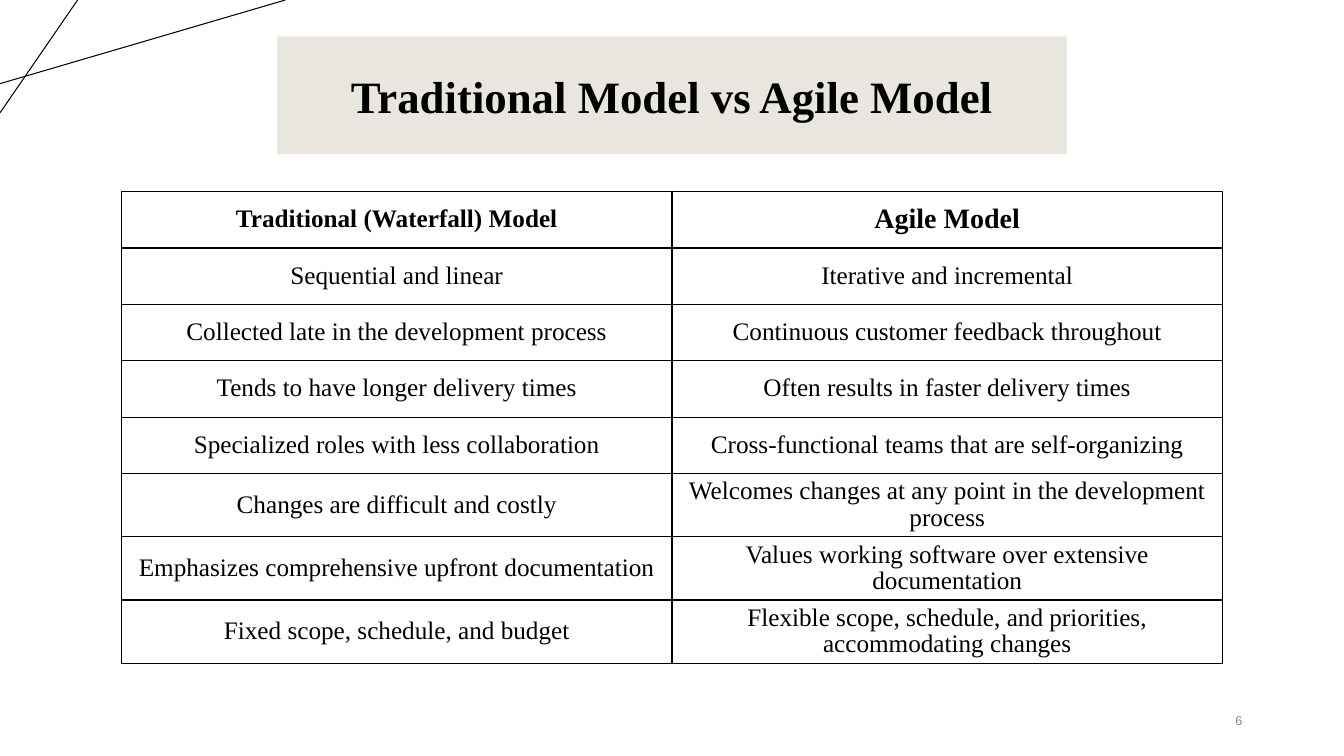
"""Build the slide that compares the traditional and agile models."""
from dataclasses import dataclass

from lxml.etree import SubElement
from pptx import Presentation
from pptx.dml.color import RGBColor
from pptx.enum.shapes import MSO_CONNECTOR
from pptx.enum.text import MSO_ANCHOR, PP_ALIGN
from pptx.oxml.ns import qn
from pptx.util import Inches, Pt

WIDTH, HEIGHT = Inches(13.33), Inches(7.5)
ROWS = [
    ("Traditional (Waterfall) Model", "Agile Model"),
    ("Sequential and linear", "Iterative and incremental"),
    ("Collected late in the development process", "Continuous customer feedback throughout"),
    ("Tends to have longer delivery times", "Often results in faster delivery times"),
    ("Specialized roles with less collaboration", "Cross-functional teams that are self-organizing"),
    ("Changes are difficult and costly", "Welcomes changes at any point in the development process"),
    ("Emphasizes comprehensive upfront documentation", "Values working software over extensive documentation"),
    ("Fixed scope, schedule, and budget", "Flexible scope, schedule, and priorities, accommodating changes"),
]


@dataclass(frozen=True)
class Theme:
    """Colours, fonts and type sizes of the slide."""
    ink: str = "000000"
    band: str = "E9E6DF"
    muted: str = "888888"
    serif: str = "Times New Roman"
    sans: str = "Arial"
    title: int = 32
    agile_head: int = 20
    body: int = 18
    number: int = 9


THEME = Theme()


def write(tf, text, size, align=PP_ALIGN.CENTER, bold=False, font=THEME.serif, color=THEME.ink):
    """Write one formatted paragraph into a text frame and return it."""
    tf.word_wrap = True
    tf.vertical_anchor = MSO_ANCHOR.MIDDLE
    p = tf.paragraphs[0]
    p.text = text
    p.alignment = align
    p.font.name, p.font.size, p.font.bold = font, Pt(size), bold
    p.font.color.rgb = RGBColor.from_string(color)
    return p


def add_line(slide, x1, y1, x2, y2):
    """Draw a thin line between two points given in inches."""
    line = slide.shapes.add_connector(MSO_CONNECTOR.STRAIGHT, *map(Inches, (x1, y1, x2, y2)))
    line.line.color.rgb = RGBColor.from_string(THEME.ink)
    line.line.width = Pt(0.75)
    SubElement(line._element.spPr, qn("a:effectLst"))


def format_title(slide, text):
    """Place the title on its coloured band."""
    sp = slide.shapes.title
    sp.width, sp.height = Inches(7.83), Inches(1.17)
    sp.left, sp.top = (WIDTH - sp.width) // 2, Inches(0.36)
    sp.fill.solid()
    sp.fill.fore_color.rgb = RGBColor.from_string(THEME.band)
    write(sp.text_frame, text, THEME.title, bold=True)


def add_borders(cell):
    """Draw a one-point border on every side of a cell."""
    tc_pr = cell._tc.get_or_add_tcPr()
    for side in ("lnL", "lnR", "lnT", "lnB"):
        ln = SubElement(tc_pr, qn(f"a:{side}"), w=str(Pt(1)))
        fill = SubElement(ln, qn("a:solidFill"))
        SubElement(fill, qn("a:srgbClr"), val=THEME.ink)


def add_comparison(slide, rows):
    """Add the centred two-column table."""
    col_width, row_height = Inches(5.46), Inches(0.56)
    width = col_width * len(rows[0])
    frame = slide.shapes.add_table(len(rows), len(rows[0]), (WIDTH - width) // 2,
                                   Inches(1.9), width, row_height * len(rows))
    table = frame.table
    table.first_row = table.horz_banding = False
    for i, row in enumerate(rows):
        for j, text in enumerate(row):
            cell = table.cell(i, j)
            add_borders(cell)
            cell.fill.background()
            cell.vertical_anchor = MSO_ANCHOR.MIDDLE
            cell.margin_left = cell.margin_right = Inches(0.1)
            size = THEME.agile_head if (i, j) == (0, 1) else THEME.body
            p = write(cell.text_frame, text, size, bold=i == 0)
            p.line_spacing = 0.95


def add_number(slide, text):
    """Add the slide number at the lower right."""
    sp = slide.shapes.add_textbox(*map(Inches, (9.42, 6.95, 3, 0.4)))
    write(sp.text_frame, text, THEME.number, PP_ALIGN.RIGHT, font=THEME.sans, color=THEME.muted)


def main():
    """Build and save the slide."""
    prs = Presentation()
    prs.slide_width, prs.slide_height = WIDTH, HEIGHT
    slide = prs.slides.add_slide(prs.slide_layouts[5])
    add_line(slide, 0, 0.83, 2.83, 0)
    add_line(slide, 0.77, 0, 0, 1.12)
    format_title(slide, "Traditional Model vs Agile Model")
    add_comparison(slide, ROWS)
    add_number(slide, "6")
    prs.save("out.pptx")


if __name__ == "__main__":
    main()
